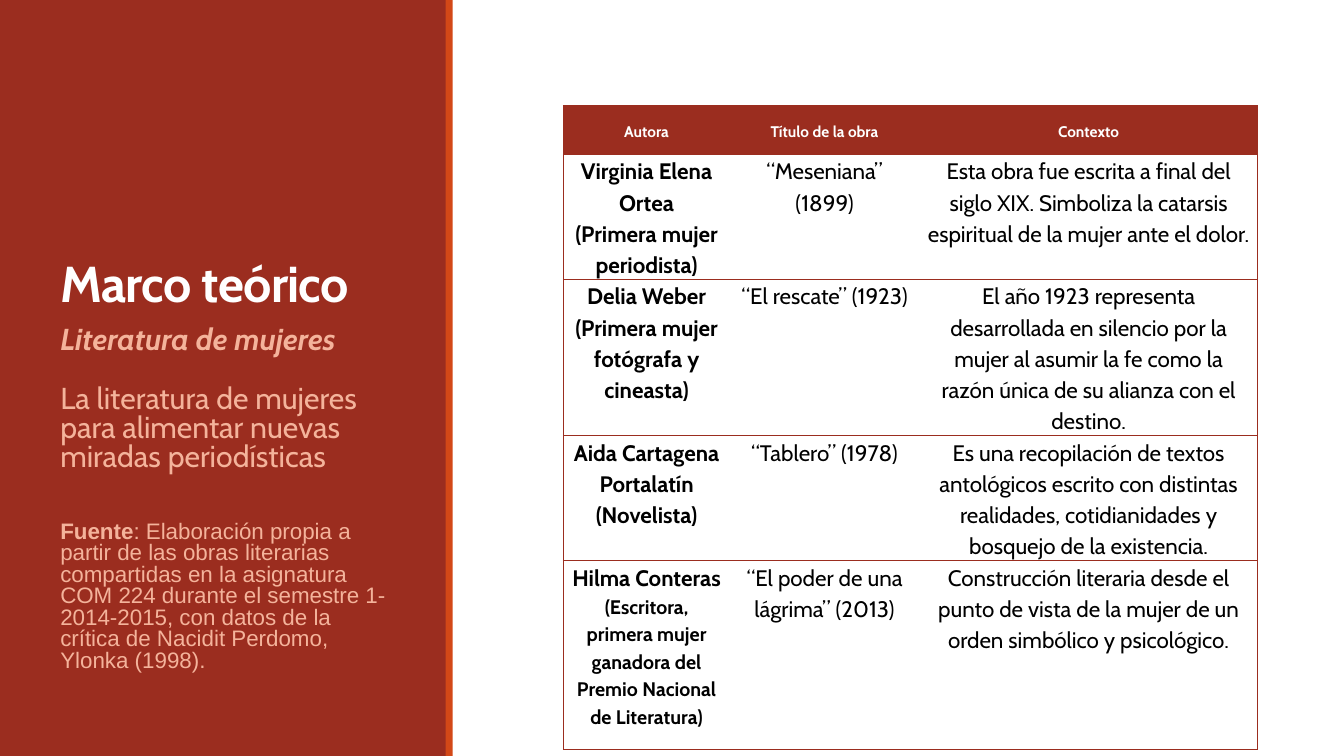
from dataclasses import dataclass

from lxml.etree import SubElement
from pptx import Presentation
from pptx.dml.color import RGBColor as RGB
from pptx.enum.shapes import MSO_SHAPE as Preset
from pptx.enum.text import MSO_ANCHOR as Anchor, PP_ALIGN as Align
from pptx.oxml.ns import qn
from pptx.util import Cm, Pt


@dataclass(frozen=True)
class Theme:
    font: str = "Cabin"
    source_font: str = "Arial"
    brick: str = "9B2D1F"
    orange: str = "D34817"
    peach: str = "F4B39B"
    white: str = "FFFFFF"
    black: str = "000000"
    title: float = 36
    lead: float = 21.6
    body: float = 16
    note: float = 14
    header: float = 11


class Deck:
    def __init__(self, theme):
        self.theme = theme
        self.file = Presentation()
        self.file.slide_width, self.file.slide_height = Cm(33.87), Cm(19.05)
        self.slide = self.file.slides.add_slide(self.file.slide_layouts[6])

    def band(self, left, width, color):
        band = self.slide.shapes.add_shape(
            Preset.RECTANGLE, Cm(left), 0, Cm(width), self.file.slide_height)
        band.shadow.inherit = False
        band.fill.solid()
        band.fill.fore_color.rgb = RGB.from_string(color)
        band.line.fill.background()

    def fill_text(self, frame, paragraphs):
        """Each paragraph is (paragraph format, [(text, font format), ...])."""
        for index, (layout, runs) in enumerate(paragraphs):
            line = frame.add_paragraph() if index else frame.paragraphs[0]
            for name, value in layout.items():
                setattr(line, name, value)
            for words, style in runs:
                run = line.add_run()
                run.text = words
                values = {"name": self.theme.font, "bold": False, **style}
                color = values.pop("color")
                tracking = values.pop("tracking", None)
                for name, value in values.items():
                    setattr(run.font, name, value)
                run.font.color.rgb = RGB.from_string(color)
                if tracking:
                    run._r.get_or_add_rPr().set("spc", str(tracking))

    def text(self, left, top, width, height, paragraphs, anchor=Anchor.TOP):
        box = self.slide.shapes.add_textbox(Cm(left), Cm(top), Cm(width), Cm(height))
        box.text_frame.word_wrap = True
        box.text_frame.vertical_anchor = anchor
        self.fill_text(box.text_frame, paragraphs)

    def borders(self, cell, first, last):
        """Rule the rows and the outer frame, with no lines between columns."""
        props = cell._tc.get_or_add_tcPr()
        shown = {"a:lnL": first, "a:lnR": last, "a:lnT": True, "a:lnB": True}
        for tag, visible in shown.items():
            edge = SubElement(props, qn(tag), w=str(Pt(1)))
            if visible:
                paint = SubElement(edge, qn("a:solidFill"))
                SubElement(paint, qn("a:srgbClr"), val=self.theme.brick)
            else:
                SubElement(edge, qn("a:noFill"))

    def table(self, left, top, widths, heights, rows):
        grid = self.slide.shapes.add_table(
            len(rows), len(widths), Cm(left), Cm(top),
            Cm(sum(widths)), Cm(sum(heights))).table
        for column, width in zip(grid.columns, widths):
            column.width = Cm(width)
        for row, height in zip(grid.rows, heights):
            row.height = Cm(height)
        cell_format = {"margin_left": Cm(0.18), "margin_right": Cm(0.18),
                       "margin_top": 0, "margin_bottom": 0}
        for r, row in enumerate(rows):
            for c, paragraphs in enumerate(row):
                cell = grid.cell(r, c)
                for name, value in cell_format.items():
                    setattr(cell, name, value)
                cell.vertical_anchor = Anchor.TOP if r else Anchor.MIDDLE
                self.borders(cell, c == 0, c == len(widths) - 1)
                cell.fill.solid()
                cell.fill.fore_color.rgb = RGB.from_string(
                    self.theme.white if r else self.theme.brick)
                self.fill_text(cell.text_frame, paragraphs)


WORKS = [
    ("Virginia Elena Ortea", "(Primera mujer periodista)", "“Meseniana” (1899)",
     "Esta obra fue escrita a final del siglo XIX. Simboliza la catarsis "
     "espiritual de la mujer ante el dolor."),
    ("Delia Weber", "(Primera mujer fotógrafa y cineasta)", "“El rescate” (1923)",
     "El año 1923 representa desarrollada en silencio por la mujer al asumir "
     "la fe como la razón única de su alianza con el destino."),
    ("Aida Cartagena Portalatín", "(Novelista)", "“Tablero” (1978)",
     "Es una recopilación de textos antológicos escrito con distintas "
     "realidades, cotidianidades y bosquejo de la existencia."),
    ("Hilma Conteras",
     "(Escritora, primera mujer ganadora del Premio Nacional de Literatura)",
     "“El poder de una lágrima” (2013)",
     "Construcción literaria desde el punto de vista de la mujer de un orden "
     "simbólico y psicológico."),
]


def main():
    theme = Theme()
    deck = Deck(theme)

    # Side panel
    deck.band(0, 11.25, theme.brick)
    deck.band(11.23, 0.18, theme.orange)

    # Title
    title = {"size": Pt(theme.title), "bold": True, "color": theme.white, "tracking": -50}
    deck.text(1.27, 1.65, 8.89, 6.35,
              [({"line_spacing": 0.85}, [("Marco teórico", title)])], Anchor.BOTTOM)

    # Subtitle, topic and source
    lead = {"size": Pt(theme.lead), "color": theme.peach}
    source = {"size": Pt(theme.body), "color": theme.peach, "name": theme.source_font}
    tight = {"line_spacing": 0.8}
    deck.text(1.27, 8.13, 8.89, 9.4, [
        (tight, [("Literatura de mujeres", {**lead, "bold": True, "italic": True})]),
        ({**tight, "space_before": Pt(21)},
         [("La literatura de mujeres para alimentar nuevas miradas periodísticas", lead)]),
        ({**tight, "space_before": Pt(35)}, [
            ("Fuente", {**source, "bold": True}),
            (": Elaboración propia a partir de las obras literarias compartidas en la "
             "asignatura COM 224 durante el semestre 1-2014-2015, con datos de la "
             "crítica de Nacidit Perdomo, Ylonka (1998).", source)]),
    ])

    # Table of authors and works
    centred = {"alignment": Align.CENTER, "line_spacing": 1.15}
    header = {"size": Pt(theme.header), "bold": True, "color": theme.white}
    plain = {"size": Pt(theme.body), "color": theme.black}
    strong = {**plain, "bold": True}
    rows = [[[(centred, [(label, header)])]
             for label in ("Autora", "Título de la obra", "Contexto")]]
    for author, role, work, context in WORKS:
        size = theme.note if len(role) > 40 else theme.body
        rows.append([
            [(centred, [(author, strong)]),
             (centred, [(role, {**strong, "size": Pt(size)})])],
            [(centred, [(work, plain)])],
            [(centred, [(context, plain)])],
        ])
    deck.table(14.2, 2.67, [4.19, 4.78, 8.53], [1.22, 3.15, 3.94, 3.15, 4.75], rows)

    deck.file.save("out.pptx")


if __name__ == "__main__":
    main()
